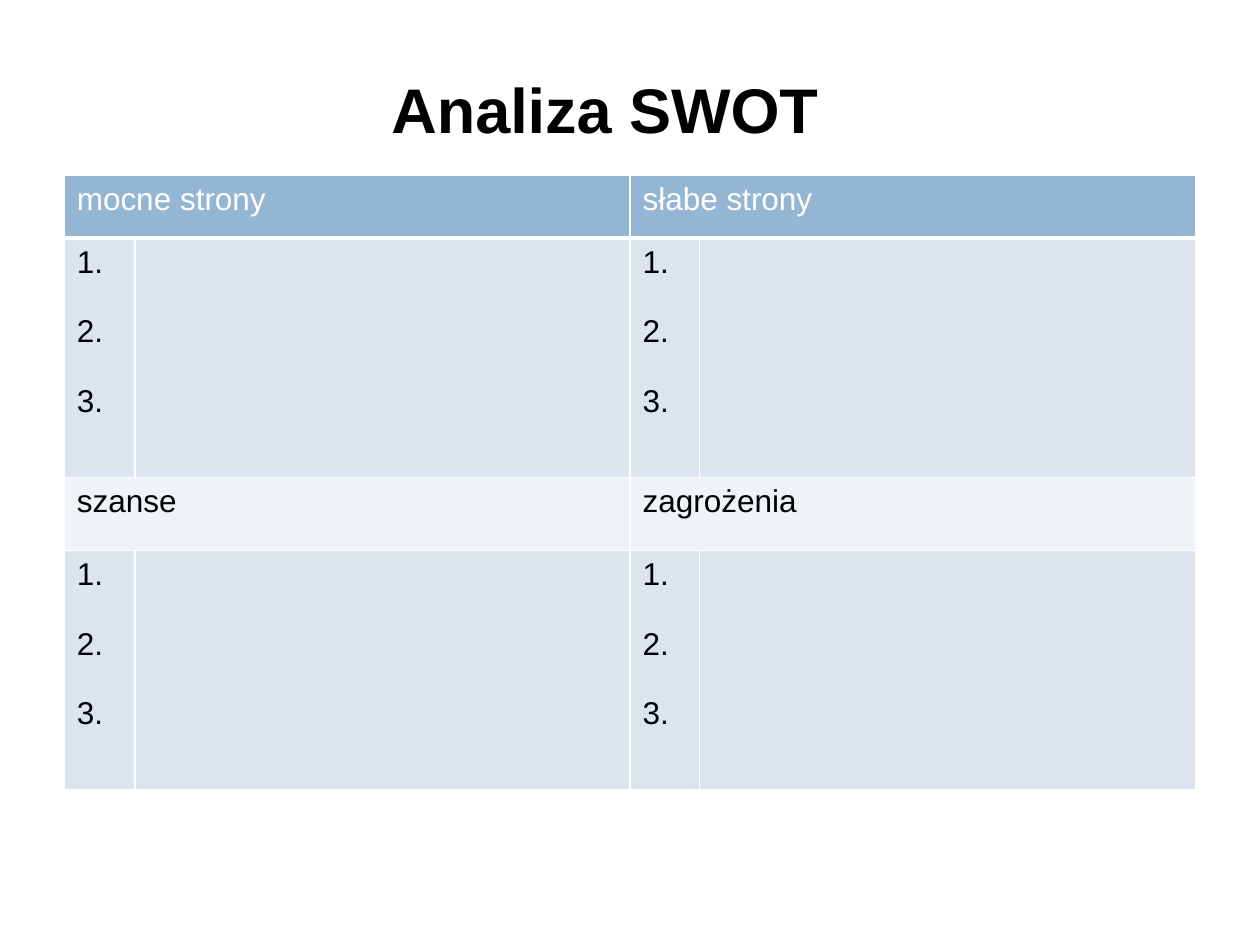
import dataclasses

import lxml.etree
import pptx
import pptx.dml.color
import pptx.enum.text
import pptx.oxml.ns
import pptx.util

FONT = "Arial"
BLACK, WHITE = "000000", "FFFFFF"
HEADER_BLUE, BODY_BLUE, PALE_BLUE = "94B6D2", "DCE5EE", "EEF3F7"
COLUMN_WIDTHS = (0.56, 3.93, 0.55, 3.94)
ITEMS = ("1.", "2.", "3.")
ITEM_GAP = 19.6


@dataclasses.dataclass
class Band:
    """A heading row over a row of numbered cells, two quadrants wide."""
    headings: tuple[str, str]
    height: float
    fill: str
    color: str
    rule: float


BANDS = (
    Band(("mocne strony", "słabe strony"), 0.5, HEADER_BLUE, WHITE, 3),
    Band(("szanse", "zagrożenia"), 0.58, PALE_BLUE, BLACK, 1),
)
ITEMS_HEIGHT = 1.9


def rgb(color: str) -> pptx.dml.color.RGBColor:
    return pptx.dml.color.RGBColor.from_string(color)


def add_run(p, text: str, size: float, color: str, bold: bool = False) -> None:
    r = p.add_run()
    r.text = text
    r.font.name = FONT
    r.font.size = pptx.util.Pt(size)
    r.font.bold = bold
    r.font.color.rgb = rgb(color)


def style_cell(cell, fill: str, bottom: float = 1) -> None:
    """Give the cell white borders and a solid fill."""
    tc_pr = cell._tc.get_or_add_tcPr()
    qn = pptx.oxml.ns.qn
    for side, width in (("L", 1), ("R", 1), ("T", 1), ("B", bottom)):
        ln = lxml.etree.SubElement(tc_pr, qn(f"a:ln{side}"), w=str(pptx.util.Pt(width)))
        solid = lxml.etree.SubElement(ln, qn("a:solidFill"))
        lxml.etree.SubElement(solid, qn("a:srgbClr"), val=WHITE)
    cell.fill.solid()
    cell.fill.fore_color.rgb = rgb(fill)


def write_cell(cell, lines: tuple[str, ...], color: str) -> None:
    tf = cell.text_frame
    for i, line in enumerate(lines):
        p = tf.add_paragraph() if i else tf.paragraphs[0]
        if i:
            p.space_before = pptx.util.Pt(ITEM_GAP)
        add_run(p, line, 18, color)


def add_title(s, text: str) -> None:
    box = s.shapes.add_textbox(*map(pptx.util.Inches, (1.69, 0.51, 6.22, 0.71)))
    tf = box.text_frame
    tf.word_wrap = True
    p = tf.paragraphs[0]
    p.alignment = pptx.enum.text.PP_ALIGN.CENTER
    add_run(p, text, 36, BLACK, bold=True)


def add_swot_table(s) -> None:
    heights = [h for band in BANDS for h in (band.height, ITEMS_HEIGHT)]
    frame = s.shapes.add_table(
        len(heights), len(COLUMN_WIDTHS),
        *map(pptx.util.Inches, (0.51, 1.39, sum(COLUMN_WIDTHS), sum(heights))))
    table = frame.table
    for column, width in zip(table.columns, COLUMN_WIDTHS):
        column.width = pptx.util.Inches(width)
    for row, height in zip(table.rows, heights):
        row.height = pptx.util.Inches(height)

    for i, band in enumerate(BANDS):
        top = 2 * i
        for col in range(len(COLUMN_WIDTHS)):
            style_cell(table.cell(top, col), band.fill, band.rule)
            style_cell(table.cell(top + 1, col), BODY_BLUE)
        for j, heading in enumerate(band.headings):
            left = 2 * j
            cell = table.cell(top, left)
            cell.merge(table.cell(top, left + 1))
            write_cell(cell, (heading,), band.color)
            write_cell(table.cell(top + 1, left), ITEMS, BLACK)


def main() -> None:
    prs = pptx.Presentation()
    prs.slide_width, prs.slide_height = pptx.util.Inches(10), pptx.util.Inches(7.5)
    s = prs.slides.add_slide(prs.slide_layouts[6])
    add_title(s, "Analiza SWOT")
    add_swot_table(s)
    prs.save("out.pptx")


if __name__ == "__main__":
    main()
